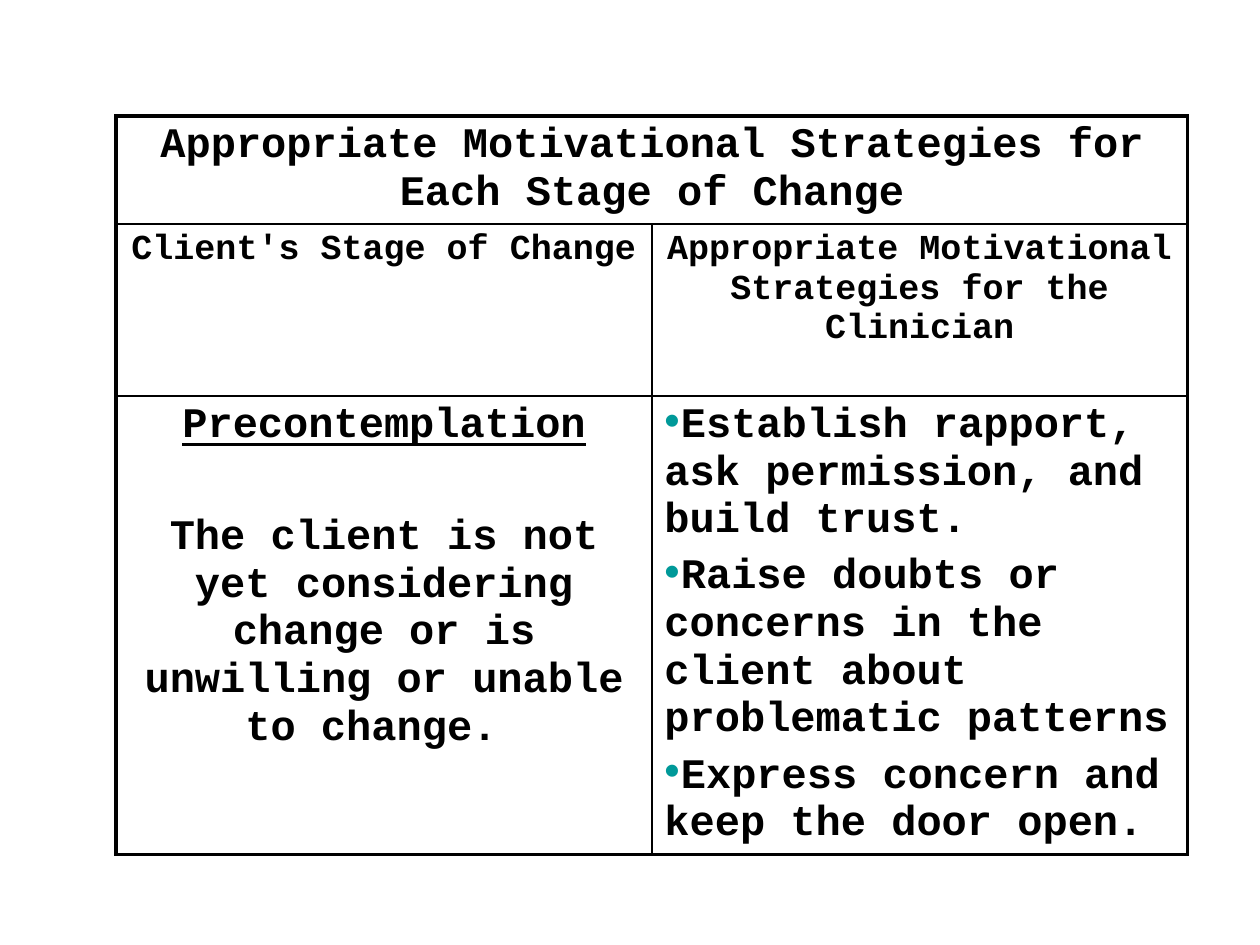
from dataclasses import dataclass

from lxml.etree import SubElement as add_element
from pptx import Presentation
from pptx.dml.color import RGBColor as Color
from pptx.enum.text import PP_ALIGN as Align
from pptx.oxml.ns import qn
from pptx.util import Cm, Pt


@dataclass(frozen=True)
class Theme:
    ink: str = "000000"
    bullet: str = "009999"
    font: str = "Courier New"
    heading: float = 24
    label: float = 20
    gap: float = 4.8
    section_gap: float = 36.8
    outer_line: float = 2.25
    inner_line: float = 1


def add_color(parent, color):
    add_element(parent, qn("a:srgbClr"), val=color)


def write(para, text, *, theme, size, align=Align.CENTER, before=0,
          underline=False, bullet=False):
    para.alignment = align
    para.space_before = Pt(before)
    if bullet:
        properties = para._p.get_or_add_pPr()
        add_color(add_element(properties, qn("a:buClr")), theme.bullet)
        add_element(properties, qn("a:buSzPct"), val="110000")
        add_element(properties, qn("a:buChar"), char="•")
    span = para.add_run()
    span.text = text
    span.font.name = theme.font
    span.font.size = Pt(size)
    span.font.bold = True
    span.font.underline = underline
    span.font.color.rgb = Color.from_string(theme.ink)


class Page:
    def __init__(self, deck, theme):
        self.theme = theme
        self.slide = deck.slides.add_slide(deck.slide_layouts[6])

    def table(self, left, top, widths, heights):
        frame = self.slide.shapes.add_table(
            len(heights), len(widths), Cm(left), Cm(top),
            Cm(sum(widths)), Cm(sum(heights)))
        table = frame.table
        table.first_row = table.horz_banding = False
        for column, width in zip(table.columns, widths):
            column.width = Cm(width)
        for row, height in zip(table.rows, heights):
            row.height = Cm(height)
        return table

    def borders(self, table):
        last_row, last_column = len(table.rows) - 1, len(table.columns) - 1
        for r, row in enumerate(table.rows):
            for c, cell in enumerate(row.cells):
                if cell.is_spanned:
                    continue
                right = c + cell.span_width - 1 if cell.is_merge_origin else c
                edges = {"a:lnL": c == 0, "a:lnR": right == last_column,
                         "a:lnT": r == 0, "a:lnB": r == last_row}
                properties = cell._tc.get_or_add_tcPr()
                for tag, outer in edges.items():
                    width = self.theme.outer_line if outer else self.theme.inner_line
                    line = add_element(properties, qn(tag), w=str(Pt(width)))
                    add_color(add_element(line, qn("a:solidFill")), self.theme.ink)
                cell.fill.background()

    def cell(self, cell, *entries):
        box = cell.text_frame
        for index, (text, style) in enumerate(entries):
            para = box.add_paragraph() if index else box.paragraphs[0]
            write(para, text, theme=self.theme, **style)


def main():
    deck = Presentation()
    deck.slide_width, deck.slide_height = Cm(25.4), Cm(19.05)
    theme = Theme()
    page = Page(deck, theme)
    strategies = page.table(2.34, 2.34, [10.8, 10.8], [2.16, 3.47, 9.24])
    strategies.cell(0, 0).merge(strategies.cell(0, 1))
    page.borders(strategies)

    heading = {"size": theme.heading}
    label = {"size": theme.label}
    page.cell(strategies.cell(0, 0), (
        "Appropriate Motivational Strategies for Each Stage of Change", heading))
    page.cell(strategies.cell(1, 0), ("Client's Stage of Change", label))
    page.cell(strategies.cell(1, 1), (
        "Appropriate Motivational Strategies for the Clinician", label))
    page.cell(
        strategies.cell(2, 0),
        ("Precontemplation", heading | {"underline": True}),
        ("The client is not yet considering change or is unwilling or unable to change. ",
         heading | {"before": theme.section_gap}))
    advice = [
        "Establish rapport, ask permission, and build trust.",
        "Raise doubts or concerns in the client about problematic patterns",
        "Express concern and keep the door open.",
    ]
    bullet = heading | {"align": Align.LEFT, "bullet": True}
    page.cell(strategies.cell(2, 1), *(
        (text, bullet | {"before": theme.gap if index else 0})
        for index, text in enumerate(advice)))

    deck.save("out.pptx")


if __name__ == "__main__":
    main()
